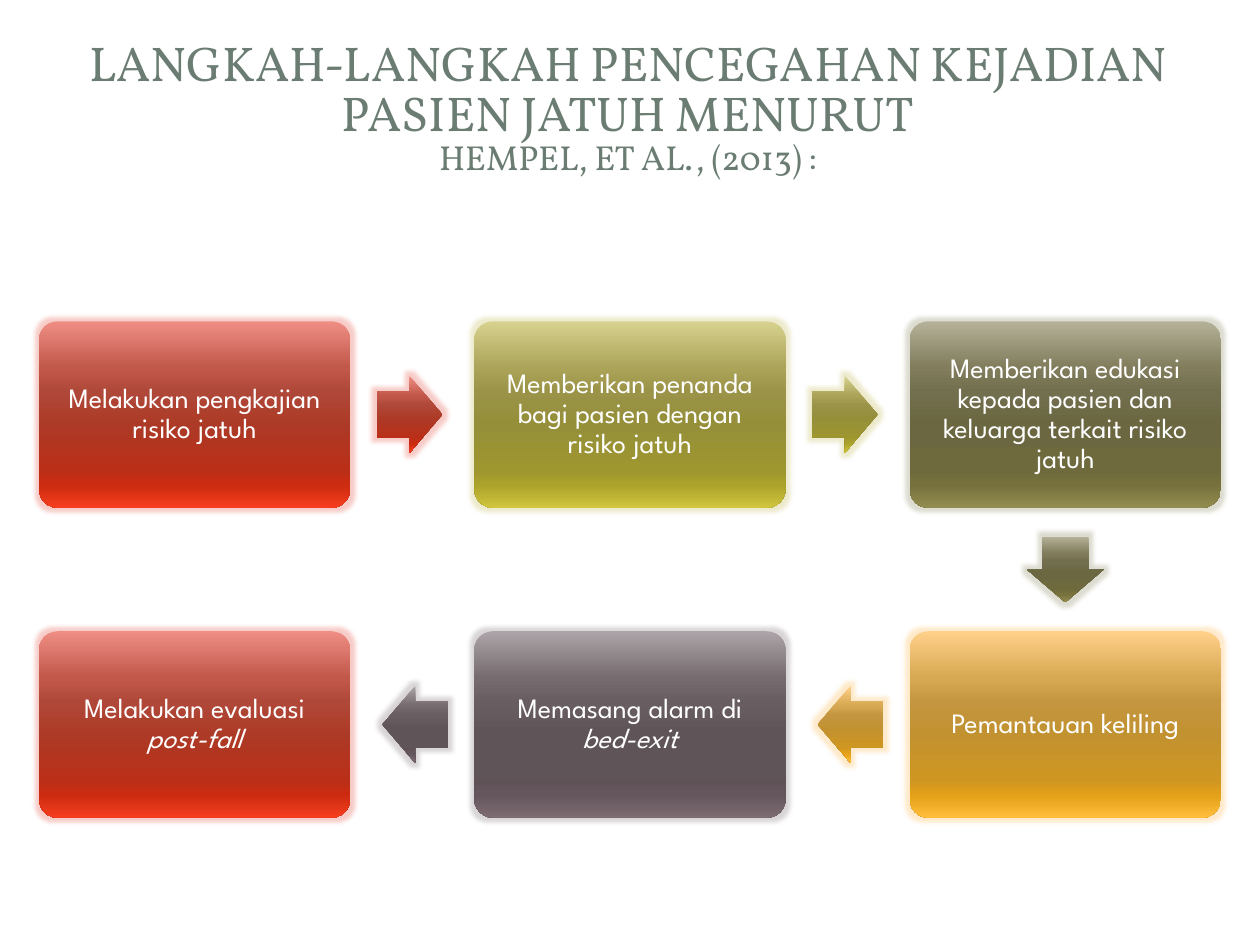
from dataclasses import dataclass

from lxml.etree import SubElement
from pptx import Presentation
from pptx.dml.color import RGBColor
from pptx.enum.shapes import MSO_SHAPE
from pptx.enum.text import MSO_ANCHOR, MSO_AUTO_SIZE, PP_ALIGN
from pptx.oxml import parse_xml
from pptx.oxml.ns import nsdecls, qn
from pptx.shapes.autoshape import Shape
from pptx.slide import Slide
from pptx.util import Inches, Pt

INK = {"title": "6B7D72", "text": "FFFFFF"}
STOPS = (0, 25, 38, 55, 80, 88, 100)
SHADES = {
    "red": "EF8E85 C1584A B04839 AD3A26 BA2F18 CD2C10 F63D1F",
    "lime": "D8D290 AAA358 9A9348 958F39 9E962F ACA32C D0C53D",
    "olive": "B5B299 807C5C 726F4F 6B6741 6E6A3D 77723D 928C50",
    "gold": "FFD08A D7A952 C49640 C29230 CF9621 E4A119 FFBD3B",
    "plum": "ACA4A8 766C70 685E62 5F5458 5F5257 65555C 7E6C73",
}
LEFT, TOP = 0.31, 2.55
WIDE, HIGH = 2.47, 1.48
STEP_X, STEP_Y = 3.455, 2.46
LONG, THICK = 0.52, 0.61
GAP = 0.21


@dataclass(frozen=True)
class Step:
    col: int
    row: int
    tone: str
    text: str
    slant: str = ""
    turn: int | None = None


STEPS = (
    Step(0, 0, "red", "Melakukan pengkajian risiko jatuh", turn=0),
    Step(1, 0, "lime", "Memberikan penanda bagi pasien dengan risiko jatuh", turn=0),
    Step(2, 0, "olive", "Memberikan edukasi kepada pasien dan keluarga terkait risiko jatuh", turn=90),
    Step(2, 1, "gold", "Pemantauan keliling", turn=180),
    Step(1, 1, "plum", "Memasang alarm di ", "bed-exit", turn=180),
    Step(0, 1, "red", "Melakukan evaluasi ", "post-fall"),
)


def paint(shape: Shape, tone: str) -> None:
    shape.line.fill.background()
    shape.shadow.inherit = False
    shades = SHADES[tone].split()
    stops = "".join(
        f'<a:gs pos="{stop * 1000}"><a:srgbClr val="{shade}"/></a:gs>'
        for stop, shade in zip(STOPS, shades)
    )
    fill = parse_xml(
        f'<a:gradFill {nsdecls("a")} rotWithShape="0"><a:gsLst>{stops}</a:gsLst>'
        '<a:lin ang="5400000" scaled="0"/></a:gradFill>'
    )
    props = shape.element.spPr
    props.find(qn("a:prstGeom")).addnext(fill)
    glow = SubElement(props.find(qn("a:effectLst")), qn("a:glow"), rad=str(Inches(0.07)))
    tint = SubElement(glow, qn("a:srgbClr"), val=shades[0])
    SubElement(tint, qn("a:alpha"), val="45000")


def draw_box(slide: Slide, step: Step, x: float, y: float) -> None:
    box = slide.shapes.add_shape(
        MSO_SHAPE.ROUNDED_RECTANGLE, Inches(x), Inches(y), Inches(WIDE), Inches(HIGH)
    )
    box.adjustments[0] = 0.1
    paint(box, step.tone)
    frame = box.text_frame
    frame.text = step.text
    frame.word_wrap = True
    frame.vertical_anchor = MSO_ANCHOR.MIDDLE
    frame.margin_left = frame.margin_right = Inches(0.11)
    frame.margin_top = frame.margin_bottom = Inches(0.11)
    para = frame.paragraphs[0]
    para.alignment = PP_ALIGN.CENTER
    para.line_spacing = 0.9
    if step.slant:
        run = para.add_run()
        run.text = step.slant
        run.font.italic = True
    for run in para.runs:
        run.font.name = "League Spartan"
        run.font.size = Pt(16)
        run.font.color.rgb = RGBColor.from_string(INK["text"])


def draw_arrow(slide: Slide, step: Step, x: float, y: float) -> None:
    mid_x, mid_y = x + WIDE / 2, y + HIGH / 2
    reach = GAP + LONG / 2
    if step.turn == 0:
        mid_x = x + WIDE + reach
    elif step.turn == 90:
        mid_y = y + HIGH + reach + 0.02
    else:
        mid_x = x - reach
    arrow = slide.shapes.add_shape(
        MSO_SHAPE.RIGHT_ARROW,
        Inches(mid_x - LONG / 2), Inches(mid_y - THICK / 2), Inches(LONG), Inches(THICK),
    )
    arrow.adjustments[0] = 0.6
    arrow.adjustments[1] = 0.5
    arrow.rotation = step.turn
    paint(arrow, step.tone)


def draw_title(slide: Slide) -> None:
    title = slide.shapes.title
    title.left, title.top = Inches(0.47), Inches(0.29)
    title.width, title.height = Inches(9.03), Inches(1.47)
    frame = title.text_frame
    frame.text = "LANGKAH-LANGKAH PENCEGAHAN KEJADIAN PASIEN JATUH MENURUT\vHEMPEL, ET AL., (2013) :"
    frame.word_wrap = True
    frame.auto_size = MSO_AUTO_SIZE.NONE
    frame.vertical_anchor = MSO_ANCHOR.MIDDLE
    frame.margin_bottom = Inches(0.37)
    para = frame.paragraphs[0]
    para.alignment = PP_ALIGN.CENTER
    para.line_spacing = 0.86
    for run, size in zip(para.runs, (27.9, 19.8)):
        run.font.name = "Vollkorn"
        run.font.size = Pt(size)
        run.font.color.rgb = RGBColor.from_string(INK["title"])


def main() -> None:
    deck = Presentation()
    deck.slide_width, deck.slide_height = Inches(10), Inches(7.5)
    slide = deck.slides.add_slide(deck.slide_layouts[5])
    draw_title(slide)
    for step in STEPS:
        x, y = LEFT + step.col * STEP_X, TOP + step.row * STEP_Y
        draw_box(slide, step, x, y)
        if step.turn is not None:
            draw_arrow(slide, step, x, y)
    deck.save("out.pptx")


if __name__ == "__main__":
    main()
